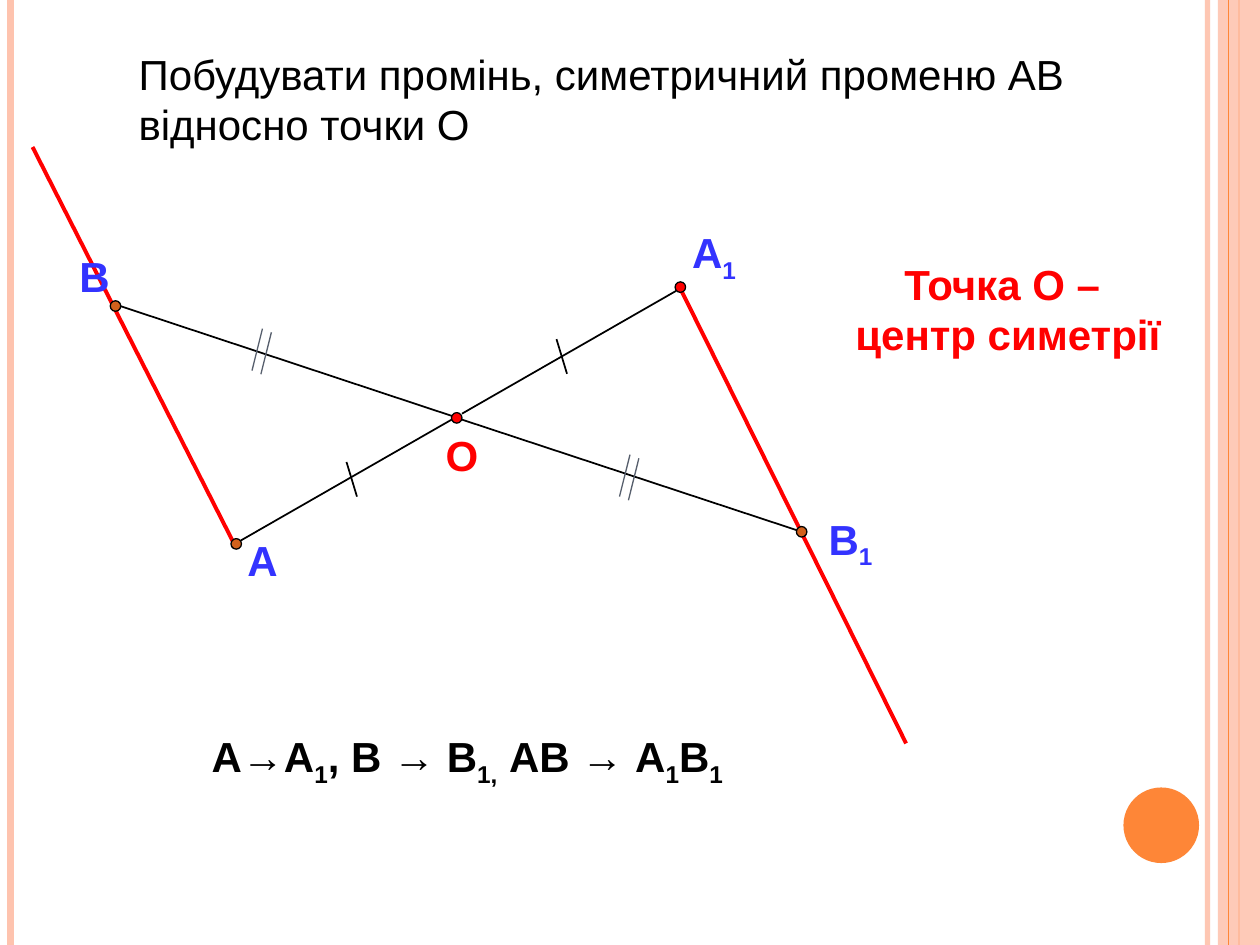
from typing import NamedTuple

from pptx import Presentation
from pptx.dml.color import RGBColor
from pptx.enum.shapes import MSO_CONNECTOR, MSO_SHAPE
from pptx.enum.text import MSO_ANCHOR, MSO_AUTO_SIZE, PP_ALIGN
from pptx.oxml.ns import qn
from pptx.util import Inches, Pt
from lxml.etree import SubElement

COLS, ROWS = 120, 90
RED, BLUE, BLACK = "FF0000", "3333FF", "000000"
RUST, GREY, PEACH, ORANGE = "D2611C", "575F6D", "FEC3AE", "FE8637"

deck = Presentation()
deck.slide_width, deck.slide_height = Inches(10), Inches(7.5)
slide = deck.slides.add_slide(deck.slide_layouts[5])
shapes = slide.shapes
CELL = deck.slide_width / COLS


class Line(NamedTuple):
    x1: float
    y1: float
    x2: float
    y2: float
    color: str = BLACK
    width: float = 1
    alpha: int = 100


class Dot(NamedTuple):
    x: float
    y: float
    color: str
    size: float = 1


class Label(NamedTuple):
    """Text in a box; parts between underscores are subscripts."""
    x: float
    y: float
    text: str
    color: str
    wide: float = 8
    high: float = 6


def cells(*counts: float) -> list[int]:
    return [round(n * CELL) for n in counts]


def paint(target, color: str, alpha: int = 100) -> None:
    """Give a fill or a line fill one solid colour."""
    target.solid()
    target.fore_color.rgb = RGBColor.from_string(color)
    if alpha < 100:
        node = target._xPr.find(qn("a:solidFill"))[0]
        SubElement(node, qn("a:alpha")).set("val", str(alpha * 1000))


def draw_line(line: Line) -> None:
    ends = cells(line.x1, line.y1, line.x2, line.y2)
    wire = shapes.add_connector(MSO_CONNECTOR.STRAIGHT, *ends)
    wire.line.width = Pt(line.width)
    paint(wire.line.fill, line.color, line.alpha)
    SubElement(wire._element.spPr, qn("a:effectLst"))


def draw_shape(kind, x: float, y: float, wide: float, high: float,
               color: str, alpha: int = 100):
    """Add a borderless preset shape."""
    shape = shapes.add_shape(kind, *cells(x, y, wide, high))
    shape.shadow.inherit = False
    paint(shape.fill, color, alpha)
    shape.line.fill.background()
    return shape


def draw_dot(dot: Dot) -> None:
    half = dot.size / 2
    shape = draw_shape(MSO_SHAPE.OVAL, dot.x - half, dot.y - half,
                       dot.size, dot.size, dot.color)
    paint(shape.line.fill, BLACK)
    shape.line.width = Pt(0.75)


def style(run, color: str, bold: bool) -> None:
    font = run.font
    font.name, font.size, font.bold = "Arial", Pt(24), bold
    font.color.rgb = RGBColor.from_string(color)


def draw_label(label: Label) -> None:
    box = shapes.add_textbox(*cells(label.x, label.y, label.wide, label.high))
    frame = box.text_frame
    frame.word_wrap = True
    frame.text = label.text
    for para in frame.paragraphs:
        para.alignment = PP_ALIGN.CENTER
        parts = para.text.split("_")
        para.text = ""
        for index, part in enumerate(parts):
            if not part:
                continue
            run = para.add_run()
            run.text = part
            style(run, label.color, True)
            if index % 2:
                run.font._element.set("baseline", "-25000")


def draw_title(text: str) -> None:
    title = shapes.title
    title.left, title.top, title.width, title.height = cells(12, 4, 100, 11)
    frame = title.text_frame
    frame.text = text
    frame.word_wrap = True
    frame.auto_size = MSO_AUTO_SIZE.NONE
    frame.vertical_anchor = MSO_ANCHOR.TOP
    para = frame.paragraphs[0]
    para.alignment = PP_ALIGN.LEFT
    style(para.runs[0], BLACK, False)


def draw_frame() -> None:
    """Draw the stripes and the disc at the slide's edges."""
    for x, color, width, alpha in ((115, PEACH, 3, 93), (1, PEACH, 4.5, 100),
                                   (118, ORANGE, 1.5, 100)):
        draw_line(Line(x, 0, x, ROWS, color, width, alpha))
    draw_shape(MSO_SHAPE.RECTANGLE, 116, 0, 4, ROWS, PEACH, 87)
    draw_line(Line(117, 0, 117, ROWS, ORANGE, 0.75))
    draw_shape(MSO_SHAPE.OVAL, 107, 75, 7.2, 7.2, ORANGE)


RAYS = [
    Line(22.3, 51.8, 3.1, 14, RED, 2.25),
    Line(64.8, 27.5, 86.3, 70.8, RED, 2.25),
]
LINKS = [
    Line(11, 29, 43.6, 39.8),
    Line(43.5, 39.8, 76.2, 50.6),
    Line(22.9, 51.5, 43.3, 39.8),
    Line(44, 39.4, 64.4, 27.7),
]
SINGLE = [Line(x, y, x + 1, y + 3.3) for x, y in ((33, 44), (53, 32.3))]
DOUBLE = [
    Line(x + dx, y + dy, x + dx - 1, y + dy + 4, GREY, 0.75)
    for x, y in ((25, 31.3), (60, 43.3))
    for dx, dy in ((0, 0), (0.85, 0.35))
]
DOTS = [
    Dot(43.5, 39.8, RED), Dot(64.8, 27.35, RED), Dot(11, 29.15, RUST),
    Dot(76.35, 50.65, RUST), Dot(22.5, 51.8, RUST),
]
LABELS = [
    Label(64, 21, "А_1_", BLUE),
    Label(40, 40.3, "О", RED),
    Label(5, 23.3, "В", BLUE),
    Label(77, 48.3, "В_1_", BLUE),
    Label(21, 50.3, "А", BLUE),
    Label(75, 24, "Точка О – \nцентр симетрії", RED, 42, 11),
    Label(13, 69, "А→А_1_, В → В_1,_ АВ → А_1_В_1_", BLACK, 63, 6),
]

draw_frame()
draw_title("Побудувати промінь, симетричний променю АВ відносно точки О")
for line in LINKS + RAYS + SINGLE + DOUBLE:
    draw_line(line)
for dot in DOTS:
    draw_dot(dot)
for label in LABELS:
    draw_label(label)

deck.save("out.pptx")
